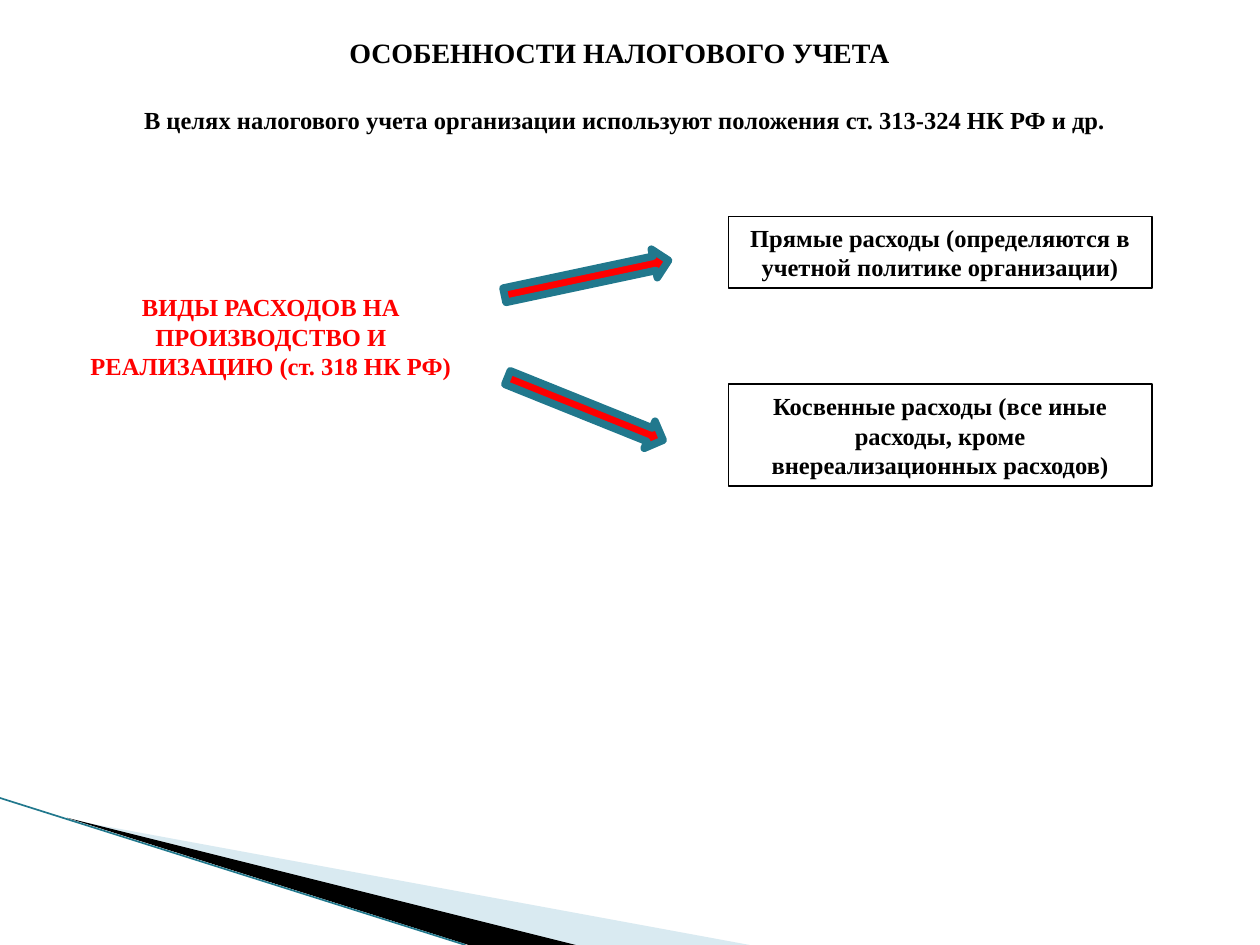
import pptx
import pptx.dml.color
import pptx.enum.shapes
import pptx.enum.text
import pptx.oxml.ns
import pptx.util
from lxml import etree

Pt = pptx.util.Pt
qn = pptx.oxml.ns.qn
RGBColor = pptx.dml.color.RGBColor
SHAPES = pptx.enum.shapes.MSO_SHAPE
BLACK = RGBColor(0x00, 0x00, 0x00)
RED = RGBColor(0xFF, 0x00, 0x00)
TEAL = RGBColor(0x21, 0x78, 0x8D)
PALE_BLUE = RGBColor(0xA0, 0xCB, 0xDC)
FONT_NAME = "Times New Roman"


def write_text(shape, text, size=14, color=BLACK, anchor=pptx.enum.text.MSO_ANCHOR.TOP):
    frame = shape.text_frame
    frame.word_wrap = True
    frame.auto_size = pptx.enum.text.MSO_AUTO_SIZE.NONE
    frame.vertical_anchor = anchor
    frame.margin_left = frame.margin_right = Pt(7.2)
    frame.margin_top = frame.margin_bottom = Pt(3.6)
    paragraph = frame.paragraphs[0]
    paragraph.alignment = pptx.enum.text.PP_ALIGN.CENTER
    run = paragraph.add_run()
    run.text = text
    run.font.name = FONT_NAME
    run.font.size = Pt(size)
    run.font.bold = True
    run.font.color.rgb = color


presentation = pptx.Presentation()
presentation.slide_width = Pt(720)
presentation.slide_height = Pt(540)
slide = presentation.slides.add_slide(presentation.slide_layouts[5])
shapes = slide.shapes

wedges = [
    (PALE_BLUE, 40, [(39.6, 468.4), (428.4, 540), (328, 540)]),
    (BLACK, 100, [(38.2, 467.3), (329, 540), (267.8, 540)]),
]
for color, opacity, points in wedges:
    corners = [(Pt(x), Pt(y)) for x, y in points]
    builder = shapes.build_freeform(*corners[0], scale=1.0)
    builder.add_line_segments(corners[1:], close=True)
    wedge = builder.convert_to_shape()
    wedge.shadow.inherit = False
    wedge.fill.solid()
    wedge.fill.fore_color.rgb = color
    wedge.line.fill.background()
    if opacity < 100:
        color_element = wedge.fill._xPr.find(qn("a:solidFill"))[0]
        etree.SubElement(color_element, qn("a:alpha"), val=str(opacity * 1000))

edge = shapes.add_connector(
    pptx.enum.shapes.MSO_CONNECTOR.STRAIGHT, Pt(0), Pt(456), Pt(266), Pt(540))
edge.line.color.rgb = TEAL
edge.line.width = Pt(0.95)
etree.SubElement(edge._element.spPr, qn("a:effectLst"))

title = shapes.title
title.left, title.top, title.width, title.height = Pt(28), Pt(16.5), Pt(652), Pt(26.6)
write_text(title, "ОСОБЕННОСТИ НАЛОГОВОГО УЧЕТА", size=16)

labels = [
    ("В целях налогового учета организации используют положения ст. 313-324 НК РФ и др.",
     BLACK, 28, 56.2, 658, 24.5),
    ("ВИДЫ РАСХОДОВ НА ПРОИЗВОДСТВО И РЕАЛИЗАЦИЮ (ст. 318 НК РФ)",
     RED, 33.8, 163.4, 242, 58.3),
]
for text, color, left, top, width, height in labels:
    label = shapes.add_textbox(Pt(left), Pt(top), Pt(width), Pt(height))
    write_text(label, text, color=color)

expense_boxes = [
    ("Прямые расходы (определяются в учетной политике организации)", 123.8, 41),
    ("Косвенные расходы (все иные расходы, кроме внереализационных расходов)", 219.6, 58.3),
]
for text, top, height in expense_boxes:
    box = shapes.add_shape(SHAPES.RECTANGLE, Pt(416.2), Pt(top), Pt(242), Pt(height))
    box.shadow.inherit = False
    box.fill.background()
    box.line.color.rgb = BLACK
    box.line.width = Pt(1)
    write_text(box, text, anchor=pptx.enum.text.MSO_ANCHOR.MIDDLE)

for left, top, rotation in [(287.3, 150.5, 348), (286.6, 225.4, 21.9)]:
    arrow = shapes.add_shape(SHAPES.RIGHT_ARROW, Pt(left), Pt(top), Pt(95.8), Pt(16.6))
    arrow.rotation = rotation
    arrow.shadow.inherit = False
    arrow.fill.solid()
    arrow.fill.fore_color.rgb = RED
    arrow.line.color.rgb = TEAL
    arrow.line.width = Pt(4.33)
    etree.SubElement(arrow._element.spPr.find(qn("a:ln")), qn("a:round"))

presentation.save("out.pptx")
